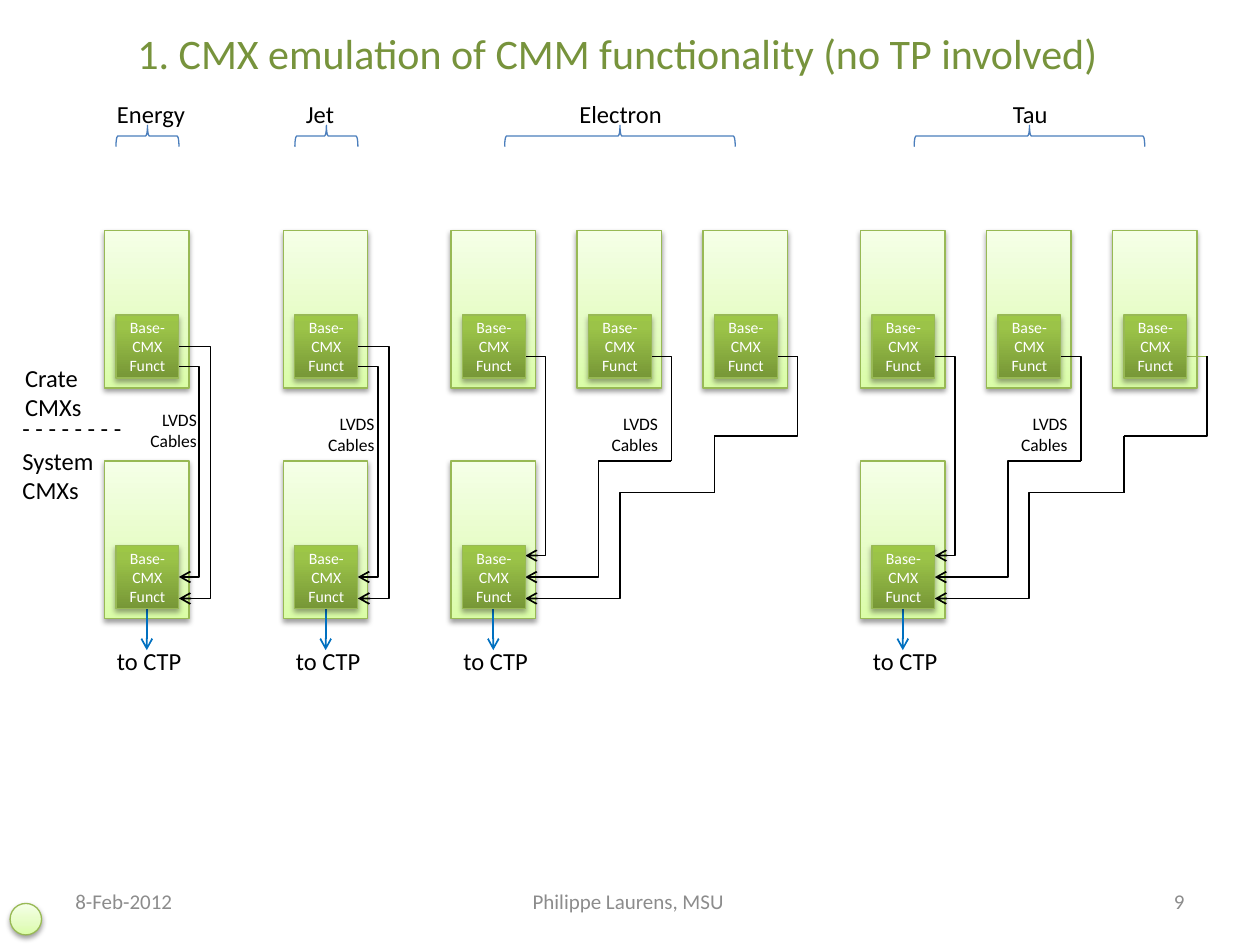
from copy import deepcopy
from dataclasses import dataclass

from lxml.etree import SubElement
from pptx import Presentation
from pptx.dml.color import RGBColor
from pptx.enum.shapes import MSO_CONNECTOR as Connector, MSO_SHAPE as Preset
from pptx.enum.text import MSO_ANCHOR as Anchor, MSO_AUTO_SIZE as AutoSize, PP_ALIGN as Align
from pptx.oxml.ns import qn
from pptx.util import Inches, Pt


@dataclass(frozen=True)
class Theme:
    """Colours, type sizes and line widths."""
    font: str = "Calibri"
    title: str = "77933C"
    ink: str = "000000"
    light: str = "FFFFFF"
    muted: str = "8C8C8C"
    border: str = "98B955"
    brace: str = "4B7EBC"
    output: str = "0070C0"
    crate: tuple = ((0, "DAFDA7"), (0.35, "E4FCC2"), (1, "F5FFE7"))
    core: tuple = ((0, "779737"), (0.8, "9BC348"), (1, "9DC746"))
    crate_shadow: tuple = (38, 1.6)
    core_shadow: tuple = (35, 1.8)
    title_size: int = 24
    label_size: int = 14
    footer_size: int = 12
    cable_size: int = 10
    core_size: int = 9
    thin: float = 0.75
    wire: float = 1


@dataclass(frozen=True)
class Box:
    """A region in inches."""
    left: float
    top: float
    width: float
    height: float

    def inches(self):
        """Return the four lengths for python-pptx."""
        return [Inches(length) for length in (self.left, self.top, self.width, self.height)]


THEME = Theme()
CRATE_WIDTH, CRATE_HEIGHT = 0.67, 1.25
CORE_SIZE, CORE_LEFT, CORE_TOP = 0.5, 0.09, 0.67
CORE_RIGHT = CORE_LEFT + CORE_SIZE
SYSTEM_OFFSET = 1.83


def write(frame, lines, size, color, align=Align.LEFT):
    """Fill a text frame with one paragraph for each line."""
    for index, line in enumerate(lines):
        paragraph = frame.add_paragraph() if index else frame.paragraphs[0]
        paragraph.alignment = align
        run = paragraph.add_run()
        run.text = line
        run.font.name = THEME.font
        run.font.size = Pt(size)
        run.font.color.rgb = RGBColor.from_string(color)


def add_label(slide, box, *lines, size=THEME.label_size, align=Align.LEFT):
    """Place an unwrapped label."""
    frame = slide.shapes.add_textbox(*box.inches()).text_frame
    frame.word_wrap = False
    frame.auto_size = AutoSize.SHAPE_TO_FIT_TEXT
    write(frame, lines, size, THEME.ink, align)


def add_shadow(shape, opacity, distance):
    """Give a shape a soft shadow below it."""
    shape.shadow.inherit = False
    effects = shape._element.spPr.find(qn("a:effectLst"))
    shadow = SubElement(effects, qn("a:outerShdw"), blurRad=str(Pt(3.1)),
                        dist=str(Pt(distance)), dir="5400000", rotWithShape="0")
    color = SubElement(shadow, qn("a:srgbClr"), val="000000")
    SubElement(color, qn("a:alpha"), val=str(opacity * 1000))


def add_panel(slide, box, stops, shadow, preset=Preset.RECTANGLE):
    """Place a bordered shape with a three-stop vertical gradient."""
    shape = slide.shapes.add_shape(preset, *box.inches())
    shape.fill.gradient()
    stop_list = shape._element.spPr.find(qn("a:gradFill")).find(qn("a:gsLst"))
    stop_list.insert(1, deepcopy(stop_list[0]))
    for stop, (position, color) in zip(shape.fill.gradient_stops, stops):
        stop.position = position
        stop.color.rgb = RGBColor.from_string(color)
    shape.fill.gradient_angle = 90
    shape.line.color.rgb = RGBColor.from_string(THEME.border)
    shape.line.width = Pt(THEME.thin)
    add_shadow(shape, *shadow)
    return shape


def add_crate(slide, left, top):
    """Place one crate."""
    add_panel(slide, Box(left, top, CRATE_WIDTH, CRATE_HEIGHT), THEME.crate, THEME.crate_shadow)


def add_core(slide, left, top):
    """Place the function block of the crate at the given corner."""
    box = Box(left + CORE_LEFT, top + CORE_TOP, CORE_SIZE, CORE_SIZE)
    frame = add_panel(slide, box, THEME.core, THEME.core_shadow).text_frame
    frame.word_wrap = False
    frame.vertical_anchor = Anchor.MIDDLE
    write(frame, ("Base-", "CMX", "Funct"), THEME.core_size, THEME.light, Align.CENTER)


def add_wire(slide, start, end, bend=None, arrow=None, color=THEME.ink, width=THEME.wire):
    """Draw a wire, leaving sideways and turning at the bend fraction if given."""
    kind = Connector.STRAIGHT if bend is None else Connector.ELBOW
    wire = slide.shapes.add_connector(kind, *[Inches(length) for length in (*start, *end)])
    wire.line.color.rgb = RGBColor.from_string(color)
    wire.line.width = Pt(width)
    properties = wire._element.spPr
    if bend is not None:
        guides = properties.find(qn("a:prstGeom")).get_or_add_avLst()
        SubElement(guides, qn("a:gd"), name="adj1", fmla=f"val {round(bend * 100000)}")
    if arrow:
        SubElement(properties.find(qn("a:ln")), qn(f"a:{arrow}"), type="arrow")
    SubElement(properties, qn("a:effectLst"))


def add_loop(slide, box, reach, top, joint, bottom):
    """Wire the first crate block down to the system block below it."""
    side, turn = box.left + CORE_RIGHT, box.left + CORE_RIGHT + reach
    for level, arrow in ((top, None), (bottom, "headEnd")):
        add_wire(slide, (side, box.top + level), (turn, box.top + joint), bend=1, arrow=arrow)


def add_single_wires(slide, box):
    """Wire a group of one crate with two cables."""
    add_loop(slide, box, 0.16, 1.08, 1.25, 2.75)
    add_loop(slide, box, 0.25, 0.92, 1.33, 2.92)


def add_triple_wires(slide, box, last_color, last_width):
    """Wire a group of three crates to its system block."""
    side, top = box.left + CORE_RIGHT, box.top
    add_loop(slide, box, 0.16, 1, 1.17, 2.58)
    second = (side + 1.16, top + 1.83)
    add_wire(slide, (side + 1, top + 1), second, bend=1)
    add_wire(slide, second, (side, top + 2.75), bend=0.5, arrow="tailEnd")
    corner, turn, drop = (side + 2.16, top + 1), (side + 1.5, top + 1.63), (side + 1.5, top + 2.08)
    add_wire(slide, (side + 2, top + 1), corner, color=last_color, width=last_width)
    add_wire(slide, turn, corner, bend=1)
    add_wire(slide, turn, drop)
    add_wire(slide, drop, (side, top + 2.92), bend=0.5, arrow="tailEnd")


def add_brace(slide, center, width):
    """Place a brace opening downwards, centred on a group."""
    box = Box(center - 0.08, 1.08 - width / 2, 0.17, width)
    brace = slide.shapes.add_shape(Preset.LEFT_BRACE, *box.inches())
    brace.rotation = 90
    brace.fill.background()
    brace.line.color.rgb = RGBColor.from_string(THEME.brace)
    brace.line.width = Pt(THEME.thin)
    brace.shadow.inherit = False


def add_group(slide, box, name, name_box, cable_box, crates, last_color=THEME.ink, last_width=THEME.wire):
    """Place the crates, wires, output and labels of one trigger group."""
    system_top = box.top + SYSTEM_OFFSET
    places = [(box.left + index, box.top) for index in range(crates)] + [(box.left, system_top)]
    for place in places:
        add_crate(slide, *place)
    if crates == 1:
        add_single_wires(slide, box)
    else:
        add_triple_wires(slide, box, last_color, last_width)
    center = box.left + CRATE_WIDTH / 2
    add_wire(slide, (center, box.top + 3), (center, box.top + 3.33), arrow="tailEnd", color=THEME.output)
    for place in places:
        add_core(slide, *place)
    add_label(slide, Box(box.left, box.top + 3.25, 0.72, 0.34), "to CTP")
    add_label(slide, cable_box, "LVDS", "Cables", size=THEME.cable_size, align=Align.RIGHT)
    add_label(slide, name_box, name)
    add_brace(slide, box.left + box.width / 2, 0.5 if crates == 1 else 1.83)


def add_title(slide, box):
    """Move and format the title placeholder."""
    title = slide.shapes.title
    title.left, title.top, title.width, title.height = box.inches()
    frame = title.text_frame
    frame.word_wrap = False
    frame.auto_size = AutoSize.NONE
    frame.vertical_anchor = Anchor.MIDDLE
    write(frame, ["1. CMX emulation of CMM functionality (no TP involved)"],
          THEME.title_size, THEME.title, Align.CENTER)


def add_footer(slide, box):
    """Place the date, author, page number and corner marker."""
    parts = ((0, 2.33, "8-Feb-2012", Align.LEFT),
             (2.92, 3.17, "Philippe Laurens, MSU ", Align.CENTER),
             (6.67, 2.33, "9", Align.RIGHT))
    for offset, width, text, align in parts:
        place = Box(box.left + offset, box.top, width, box.height)
        frame = slide.shapes.add_textbox(*place.inches()).text_frame
        frame.word_wrap = True
        frame.vertical_anchor = Anchor.MIDDLE
        write(frame, [text], THEME.footer_size, THEME.muted, align)
    add_panel(slide, Box(0.08, 7.17, 0.25, 0.25), THEME.crate, THEME.crate_shadow, Preset.OVAL)


def main():
    """Build and save the slide."""
    presentation = Presentation()
    presentation.slide_width, presentation.slide_height = Inches(10), Inches(7.5)
    slide = presentation.slides.add_slide(presentation.slide_layouts[5])
    add_title(slide, Box(0.98, 0.17, 7.84, 0.5))
    groups = (
        (0.83, "Energy", 0.83, 0.75, (1.09, 3.2), 1),
        (2.25, "Jet", 2.33, 0.43, (2.5, 3.23), 1),
        (3.58, "Electron", 4.5, 0.86, (4.75, 3.23), 3),
        (6.83, "Tau", 7.94, 0.48, (8, 3.23), 3, THEME.border, THEME.thin),
    )
    for left, name, name_left, name_width, cable, crates, *last in groups:
        box = Box(left, 1.83, CRATE_WIDTH + crates - 1, SYSTEM_OFFSET + CRATE_HEIGHT)
        add_group(slide, box, name, Box(name_left, 0.74, name_width, 0.34),
                  Box(*cable, 0.57, 0.44), crates, *last)
    add_label(slide, Box(0.1, 2.83, 0.65, 0.57), "Crate", "CMXs")
    add_label(slide, Box(0.08, 3.49, 0.77, 0.57), "System", "CMXs")
    add_label(slide, Box(0.08, 3.23, 1.03, 0.34), "- - - - - - - -")
    add_footer(slide, Box(0.5, 6.95, 9, 0.4))
    presentation.save("out.pptx")


if __name__ == "__main__":
    main()
